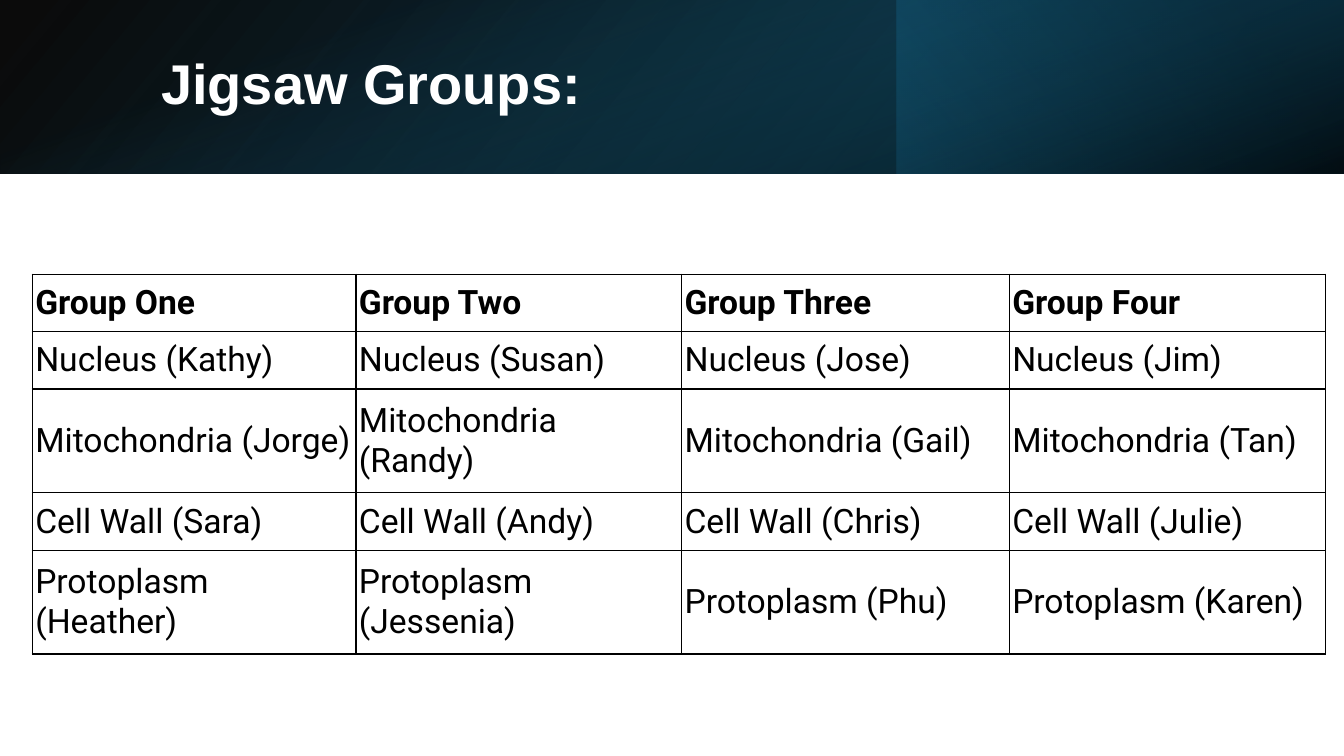
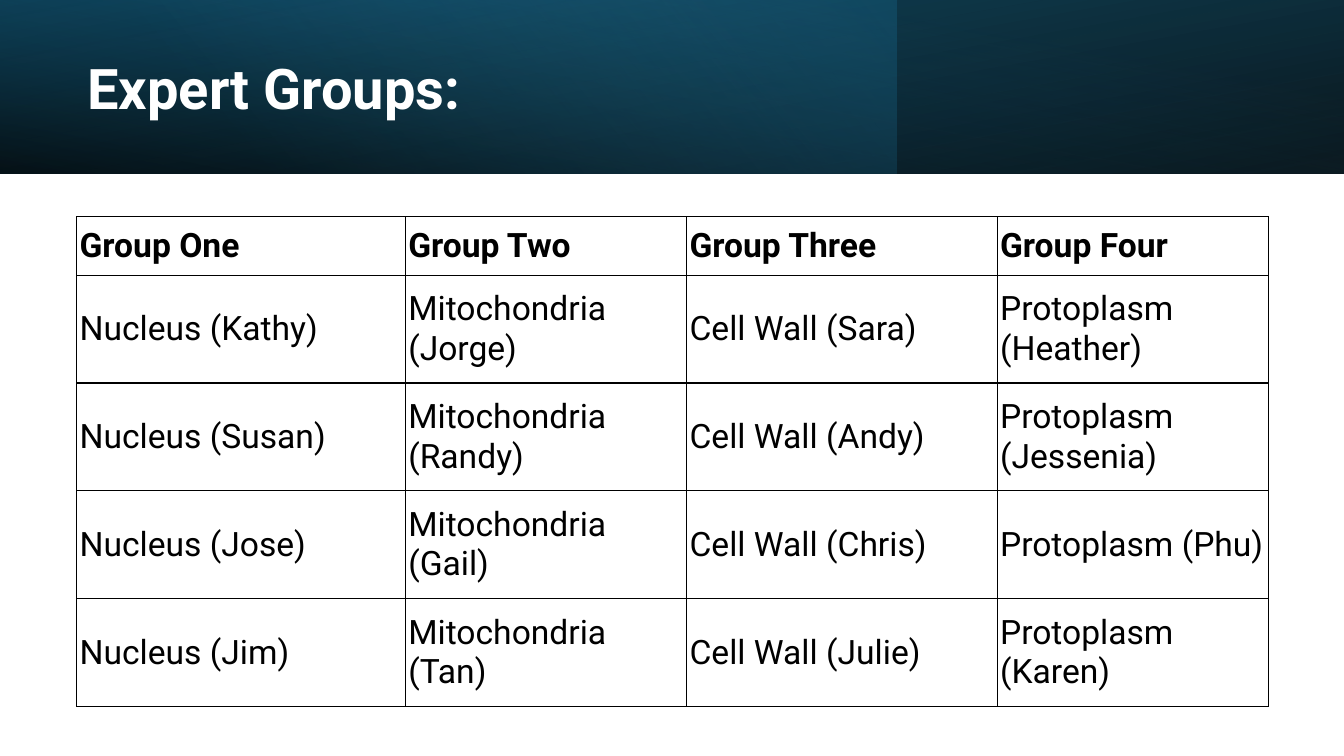
from lxml.etree import SubElement as Sub
from pptx import Presentation
from pptx.dml.color import RGBColor
from pptx.enum.shapes import MSO_SHAPE as Shape
from pptx.enum.text import MSO_ANCHOR as Anchor
from pptx.oxml.ns import qn
from pptx.util import Inches, Pt

BLACK = RGBColor(0x00, 0x00, 0x00)
WHITE = RGBColor(0xFF, 0xFF, 0xFF)
NAVY = RGBColor(0x10, 0x48, 0x62)
DEEP = RGBColor(0x0B, 0x30, 0x41)
TEAL = RGBColor(0x15, 0x60, 0x82)
SKY = RGBColor(0x46, 0xB1, 0xE1)

WIDE, HIGH, BAND = 13.33, 7.5, 1.72
PART = 8.89  # two thirds of the width
INSET = Inches(0.03)

HEADS = ["Group One", "Group Two", "Group Three", "Group Four"]
ROLES = {
    "Nucleus": ["Kathy", "Susan", "Jose", "Jim"],
    "Mitochondria": ["Jorge", "Randy", "Gail", "Tan"],
    "Cell Wall": ["Sara", "Andy", "Chris", "Julie"],
    "Protoplasm": ["Heather", "Jessenia", "Phu", "Karen"],
}


def add_band(slide, box, stops, angle, turn=0, flip=False):
    """Rectangle with a gradient; stops are (percent, colour, opacity)."""
    band = slide.shapes.add_shape(Shape.RECTANGLE, *map(Inches, box))
    band.shadow.inherit = False
    band.line.fill.background()
    band.rotation = turn
    if flip:
        band._element.spPr.xfrm.set("flipH", "1")
    band.fill.gradient()
    band.fill.gradient_angle = (360 - angle) % 360  # clockwise angle
    for stop, (place, color, _) in zip(band.fill.gradient_stops, stops):
        stop.position = place / 100
        stop.color.rgb = color
    tones = band._element.spPr.iter(qn("a:srgbClr"))
    for tone, (_, _, alpha) in zip(list(tones), stops):
        Sub(tone, qn("a:alpha"), val=str(alpha * 1000))


def add_title(slide, text, box, face):
    frame = slide.shapes.add_textbox(*map(Inches, box)).text_frame
    frame.word_wrap = True
    frame.vertical_anchor = Anchor.MIDDLE
    para = frame.paragraphs[0]
    para.text = text
    para.line_spacing = 0.9
    set_font(para, face, 40, WHITE, True)


def set_font(para, face, size, color, bold):
    font = para.font
    font.name, font.size, font.bold = face, Pt(size), bold
    font.color.rgb = color


def add_border(cell):
    props = cell._tc.get_or_add_tcPr()
    for side in "LRTB":
        line = Sub(props, qn(f"a:ln{side}"), w=str(Pt(1)))
        fill = Sub(line, qn("a:solidFill"))
        Sub(fill, qn("a:srgbClr"), val=str(BLACK))


def add_grid(slide, left, top, cols, rows, texts):
    box = map(Inches, (left, top, sum(cols), sum(rows)))
    grid = slide.shapes.add_table(len(rows), len(cols), *box).table
    grid.first_row = grid.horz_banding = False
    for col, width in zip(grid.columns, cols):
        col.width = Inches(width)
    for row, height, line in zip(grid.rows, rows, texts):
        row.height = Inches(height)
        for cell, text in zip(row.cells, line):
            cell.margin_left = cell.margin_right = INSET
            cell.margin_top = cell.margin_bottom = INSET
            cell.vertical_anchor = Anchor.MIDDLE
            add_border(cell)
            cell.fill.background()
            cell.text = text
            para = cell.text_frame.paragraphs[0]
            set_font(para, "Roboto", 24, BLACK, line is HEADS)


def add_jigsaw(slide, teams):
    full = (0, 0, WIDE, BAND)
    # Header band
    add_band(slide, full, [(0, BLACK, 96), (100, NAVY, 100)], 140, flip=True)
    add_band(slide, (PART, 0, WIDE - PART, BAND),
             [(19, DEEP, 68), (100, TEAL, 79)], 320, turn=180)
    shift = (WIDE - BAND) / 2  # upright box that turns onto the band
    add_band(slide, (shift, -shift, BAND, WIDE),
             [(23, TEAL, 0), (99, BLACK, 74)], 340, turn=90)
    add_title(slide, "Jigsaw Groups:", (1.5, 0.38, 10.98, 0.96), "Arial")
    # One row for each cell part
    add_grid(slide, 0.32, 2.72, [3.21, 3.23, 3.25, 3.14],
             [0.57, 0.57, 1.03, 0.57, 1.03], [HEADS, *teams])


def add_expert(slide, teams):
    full = (0, 0, WIDE, BAND)
    # Header band
    add_band(slide, full, [(0, BLACK, 96), (100, NAVY, 100)], 100,
             turn=180, flip=True)
    add_band(slide, (0, 0, PART, BAND), [(0, TEAL, 41), (74, SKY, 0)], 140)
    add_band(slide, full, [(0, BLACK, 63), (78, TEAL, 15)], 260, flip=True)
    add_title(slide, "Expert Groups:", (0.77, 0.27, 7.72, 1.27), "Roboto")
    # One column for each cell part
    add_grid(slide, 0.76, 2.15, [3.26, 2.79, 3.08, 2.69],
             [0.58] + [1.07] * 4, [HEADS, *zip(*teams)])


def main():
    deck = Presentation()
    deck.slide_width, deck.slide_height = Inches(WIDE), Inches(HIGH)
    teams = [[f"{role} ({name})" for name in names]
             for role, names in ROLES.items()]
    for build in (add_jigsaw, add_expert):
        build(deck.slides.add_slide(deck.slide_layouts[6]), teams)
    deck.save("out.pptx")


if __name__ == "__main__":
    main()
